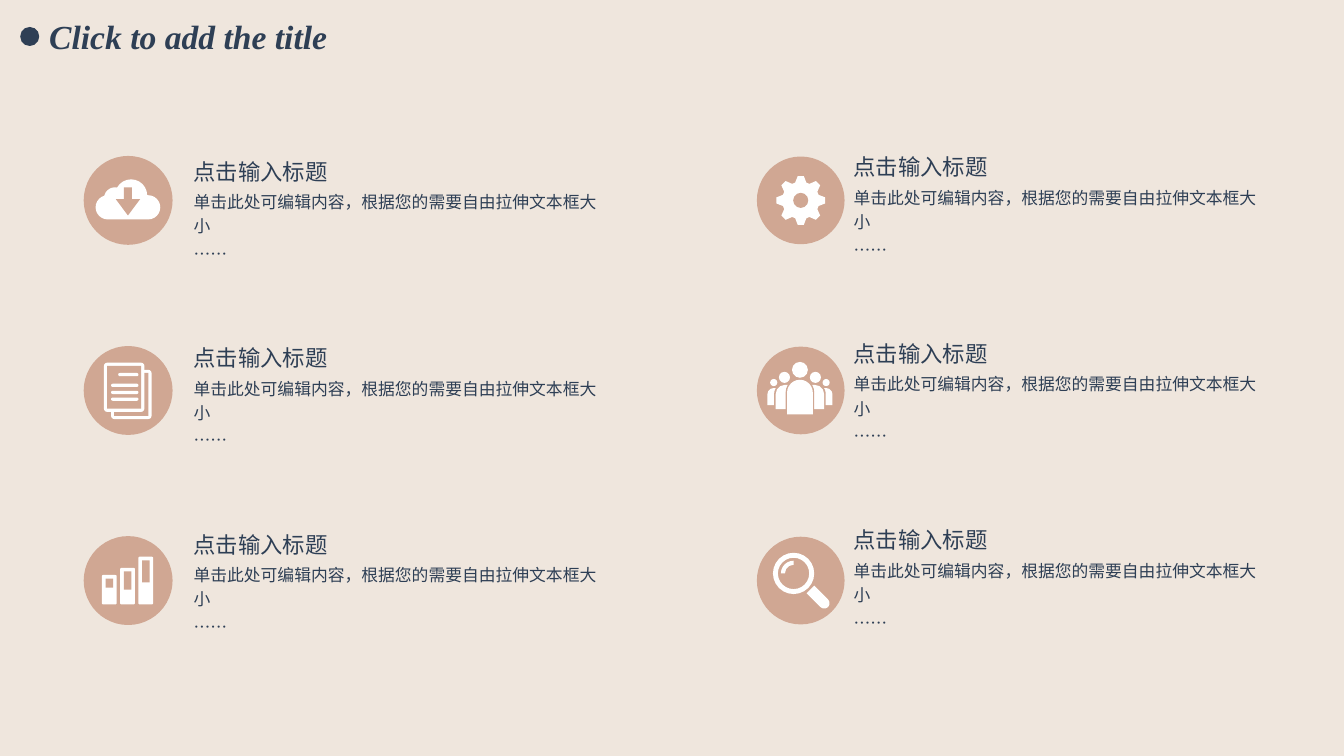
from math import cos, radians, sin

from lxml import etree
from pptx import Presentation
from pptx.dml.color import RGBColor
from pptx.enum.shapes import MSO_SHAPE
from pptx.oxml.ns import qn
from pptx.util import Cm, Pt

OVAL = MSO_SHAPE.OVAL
RECTANGLE = MSO_SHAPE.RECTANGLE
ROUNDED = MSO_SHAPE.ROUNDED_RECTANGLE
ROUND_TOP = MSO_SHAPE.ROUND_2_SAME_RECTANGLE
DOWN_ARROW = MSO_SHAPE.DOWN_ARROW
DONUT = MSO_SHAPE.DONUT
BLOCK_ARC = MSO_SHAPE.BLOCK_ARC

NAVY, CLAY, WHITE, CREAM = "2E3F55", "D0A793", "FFFFFF", "EFE6DD"
TITLE_FONT, BODY_FONT = "Times New Roman", "Noto Sans CJK SC"
ENTRY_LINES = [
    ("点击输入标题", 16),
    ("单击此处可编辑内容，根据您的需要自由拉伸文本框大小", 12),
    ("……", 12),
]
LEFT_X, RIGHT_X = 3.23, 20.18
ROW_Y = [5.05 + 4.79 * row for row in range(3)]


def paint(fill, color):
    fill.solid()
    fill.fore_color.rgb = RGBColor.from_string(color)


def add_part(kind, center, box, color, *adjustments):
    """Add a plain shape whose box (left, top, width, height) is measured from center."""
    left, top, width, height = box
    part = slide.shapes.add_shape(
        kind, Cm(center[0] + left), Cm(center[1] + top), Cm(width), Cm(height))
    paint(part.fill, color)
    part.line.fill.background()
    part.shadow.inherit = False
    for index, value in enumerate(adjustments):
        part.adjustments[index] = value
    return part


presentation = Presentation()
presentation.slide_width, presentation.slide_height = Cm(33.87), Cm(19.05)
slide = presentation.slides.add_slide(presentation.slide_layouts[6])
paint(slide.background.fill, CREAM)

# Title with its dot
title = slide.shapes.add_textbox(Cm(0.99), Cm(0.28), Cm(8), Cm(1.27))
title.text_frame.text = "Click to add the title"
title_font = title.text_frame.paragraphs[0].runs[0].font
title_font.name, title_font.size = TITLE_FONT, Pt(24)
title_font.bold = title_font.italic = True
paint(title_font.fill, NAVY)
add_part(OVAL, (0.75, 0.92), (-0.24, -0.24, 0.48, 0.48), NAVY)

# Six entries: a disc and a text block each
for disc_x, diameter, text_x, first_text_y in [
    (LEFT_X, 2.24, 4.88, 3.84), (RIGHT_X, 2.21, 21.51, 3.73)
]:
    for row, disc_y in enumerate(ROW_Y):
        add_part(OVAL, (disc_x, disc_y),
                 (-diameter / 2, -diameter / 2, diameter, diameter), CLAY)
        entry = slide.shapes.add_textbox(
            Cm(text_x), Cm(first_text_y + 4.7 * row), Cm(10.31), Cm(2.82))
        frame = entry.text_frame
        frame.word_wrap = True
        frame.margin_left = frame.margin_right = 0
        frame.margin_top = frame.margin_bottom = 0
        frame.text = "\n".join(text for text, size in ENTRY_LINES)
        for paragraph, (text, size) in zip(frame.paragraphs, ENTRY_LINES):
            paragraph.line_spacing = 1.2
            paragraph.space_before = Pt(0.2 * size)
            font = paragraph.runs[0].font
            font.name, font.size = BODY_FONT, Pt(size)
            paint(font.fill, NAVY)
            properties = paragraph.runs[0]._r.get_or_add_rPr()
            etree.SubElement(properties, qn("a:ea"), typeface=BODY_FONT)

# Cloud with a download arrow
cloud = (LEFT_X, ROW_Y[0])
add_part(OVAL, cloud, (-0.33, -0.53, 0.81, 0.81), WHITE)
add_part(OVAL, cloud, (-0.61, -0.33, 0.56, 0.56), WHITE)
add_part(ROUNDED, cloud, (-0.82, -0.13, 1.63, 0.61), WHITE, 0.5)
add_part(DOWN_ARROW, cloud, (-0.31, -0.33, 0.61, 0.71), CLAY, 0.33, 0.67)

# Two sheets of paper
sheets = (LEFT_X, ROW_Y[1])
for left, top in [(-0.43, -0.52), (-0.61, -0.7)]:
    add_part(ROUNDED, sheets, (left, top, 1.02, 1.24), WHITE, 0.08)
    add_part(RECTANGLE, sheets, (left + 0.08, top + 0.08, 0.86, 1.08), CLAY)
for left, top, width in [
    (-0.25, -0.44, 0.51), (-0.43, -0.17, 0.69), (-0.43, 0.01, 0.69), (-0.43, 0.18, 0.69)
]:
    add_part(ROUNDED, sheets, (left, top, width, 0.08), WHITE, 0.5)

# Bars with an open window at the top
bars = (LEFT_X, ROW_Y[2])
for index, (top, window_height) in enumerate([(-0.14, 0.23), (-0.32, 0.46), (-0.6, 0.56)]):
    left = -0.66 + 0.46 * index
    add_part(ROUNDED, bars, (left, top, 0.37, 0.6 - top), WHITE, 0.08)
    add_part(RECTANGLE, bars, (left + 0.09, top + 0.09, 0.19, window_height), CLAY)

# Gear with eight teeth
gear = (RIGHT_X, ROW_Y[0])
outline = []
for tooth in range(8):
    for offset, radius in [(-17.4, 0.47), (-7, 0.62), (7, 0.62), (17.4, 0.47)]:
        angle = radians(45 * tooth + offset)
        outline.append((Cm(gear[0] + radius * sin(angle)), Cm(gear[1] - radius * cos(angle))))
builder = slide.shapes.build_freeform(*outline[0])
builder.add_line_segments(outline[1:], close=True)
wheel = builder.convert_to_shape()
paint(wheel.fill, WHITE)
wheel.line.fill.background()
wheel.shadow.inherit = False
add_part(OVAL, gear, (-0.19, -0.19, 0.38, 0.38), CLAY)

# Group of people: bodies from the back row to the front, then heads
people = (RIGHT_X - 0.02, ROW_Y[1])
for width, top, bottom, color, rounding in [
    (1.64, -0.06, 0.37, WHITE, 0.36), (1.3, -0.17, 0.5, CLAY, 0.38),
    (1.22, -0.14, 0.47, WHITE, 0.38), (0.72, -0.31, 0.6, CLAY, 0.5),
    (0.65, -0.27, 0.6, WHITE, 0.5),
]:
    add_part(ROUND_TOP, people, (-width / 2, top, width, bottom - top), color, rounding)
for x, top, diameter in [
    (0, -0.72, 0.4), (-0.39, -0.47, 0.28), (0.39, -0.47, 0.28),
    (-0.66, -0.29, 0.18), (0.66, -0.29, 0.18),
]:
    add_part(OVAL, people, (x - diameter / 2, top, diameter, diameter), WHITE)

# Magnifier
magnifier = (RIGHT_X, ROW_Y[2])
add_part(DONUT, magnifier, (-0.7, -0.7, 1.04, 1.04), WHITE, 0.12)
add_part(BLOCK_ARC, magnifier, (-0.5, -0.5, 0.64, 0.64), WHITE, 108, 162, 0.16)
handle = add_part(ROUND_TOP, magnifier, (0.33, 0.13, 0.27, 0.63), WHITE, 0.5)
handle.rotation = 135

presentation.save("out.pptx")
